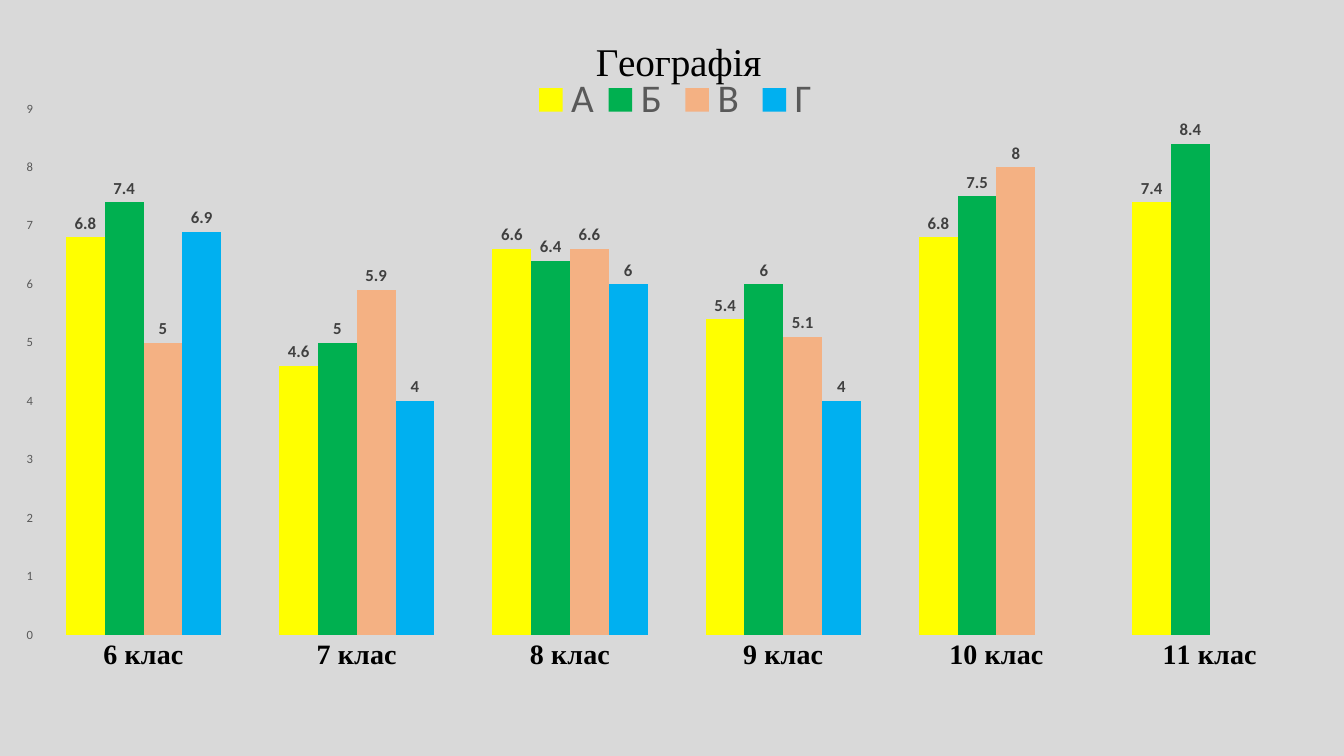
import pptx
import pptx.chart.data
import pptx.dml.color
import pptx.enum.chart
import pptx.oxml
import pptx.oxml.ns
import pptx.util
from pptx.util import Cm, Pt

RGBColor = pptx.dml.color.RGBColor
BACKGROUND = RGBColor(0xD9, 0xD9, 0xD9)
BLACK = RGBColor(0x00, 0x00, 0x00)
GREY = RGBColor(0x59, 0x59, 0x59)
DARK_GREY = RGBColor(0x40, 0x40, 0x40)
YELLOW = RGBColor(0xFF, 0xFF, 0x00)
GREEN = RGBColor(0x00, 0xB0, 0x50)
PEACH = RGBColor(0xF4, 0xB1, 0x83)
BLUE = RGBColor(0x00, 0xB0, 0xF0)
SANS, SERIF = "Calibri", "Times New Roman"

# Content
SUBJECT = "Географія"
GRADES = ["6 клас", "7 клас", "8 клас", "9 клас", "10 клас", "11 клас"]
CLASSES = [
    ("А", YELLOW, (6.8, 4.6, 6.6, 5.4, 6.8, 7.4)),
    ("Б ", GREEN, (7.4, 5, 6.4, 6, 7.5, 8.4)),
    ("В ", PEACH, (5, 5.9, 6.6, 5.1, 8, None)),
    ("Г", BLUE, (6.9, 4, 6, 4, None, None)),
]
WIDTH, HEIGHT = Cm(33.87), Cm(19.05)


def set_font(font, name, size, color, bold=False):
    font.name, font.size, font.bold = name, Pt(size), bold
    font.color.rgb = color


def place(element, index, target=None, **fractions):
    """Give a chart part a fixed place, in fractions of the chart."""
    for old in element.findall(pptx.oxml.ns.qn("c:layout")):
        element.remove(old)
    inner = f'<c:layoutTarget val="{target}"/>' if target else ""
    inner += "".join(f'<c:{side}Mode val="edge"/>' for side in "xy")
    inner += "".join(f'<c:{key} val="{value}"/>' for key, value in fractions.items())
    element.insert(index, pptx.oxml.parse_xml(
        f'<c:layout {pptx.oxml.ns.nsdecls("c")}>'
        f"<c:manualLayout>{inner}</c:manualLayout></c:layout>"))


# Slide
presentation = pptx.Presentation()
presentation.slide_width, presentation.slide_height = WIDTH, HEIGHT
slide = presentation.slides.add_slide(presentation.slide_layouts[6])
slide.background.fill.solid()
slide.background.fill.fore_color.rgb = BACKGROUND

# Chart
marks = pptx.chart.data.CategoryChartData()
marks.categories = GRADES
for letter, _, averages in CLASSES:
    marks.add_series(letter, averages)
chart = slide.shapes.add_chart(
    pptx.enum.chart.XL_CHART_TYPE.COLUMN_CLUSTERED, 0, 0, WIDTH, HEIGHT, marks).chart
set_font(chart.font, SANS, 10, BLACK)
plot = chart.plots[0]
plot.gap_width, plot.overlap, plot.vary_by_categories = 150, 0, False
place(chart.plots[0]._element.getparent(), 0, "inner", x=0.0275, y=0.144, w=0.952, h=0.696)

# Title
title = chart.chart_title
title.text_frame.text = SUBJECT
set_font(title.text_frame.paragraphs[0].font, SERIF, 28, BLACK)
place(title._element, 1, x=0.438, y=0.04)

# Legend
chart.has_legend = True
legend = chart.legend
legend.position = pptx.enum.chart.XL_LEGEND_POSITION.BOTTOM
legend.include_in_layout = False
set_font(legend.font, SANS, 28, GREY)
place(legend._element, 1, x=0.39, y=0.1, w=0.225, h=0.064)

# Axes
grade_axis, mark_axis = chart.category_axis, chart.value_axis
for axis in (grade_axis, mark_axis):
    axis.has_major_gridlines = False
    axis.major_tick_mark = axis.minor_tick_mark = pptx.enum.chart.XL_TICK_MARK.NONE
    axis.format.line.fill.background()
set_font(grade_axis.tick_labels.font, SERIF, 20, BLACK, True)
set_font(mark_axis.tick_labels.font, SANS, 9, GREY)
mark_axis.minimum_scale, mark_axis.maximum_scale, mark_axis.major_unit = 0, 9, 1

# Columns and their values
for series, (_, color, _) in zip(plot.series, CLASSES):
    series.format.fill.solid()
    series.format.fill.fore_color.rgb = color
    series.invert_if_negative = False
    labels = series.data_labels
    labels.show_value = True
    labels.position = pptx.enum.chart.XL_LABEL_POSITION.OUTSIDE_END
    set_font(labels.font, SANS, 12, DARK_GREY, True)

presentation.save("out.pptx")
